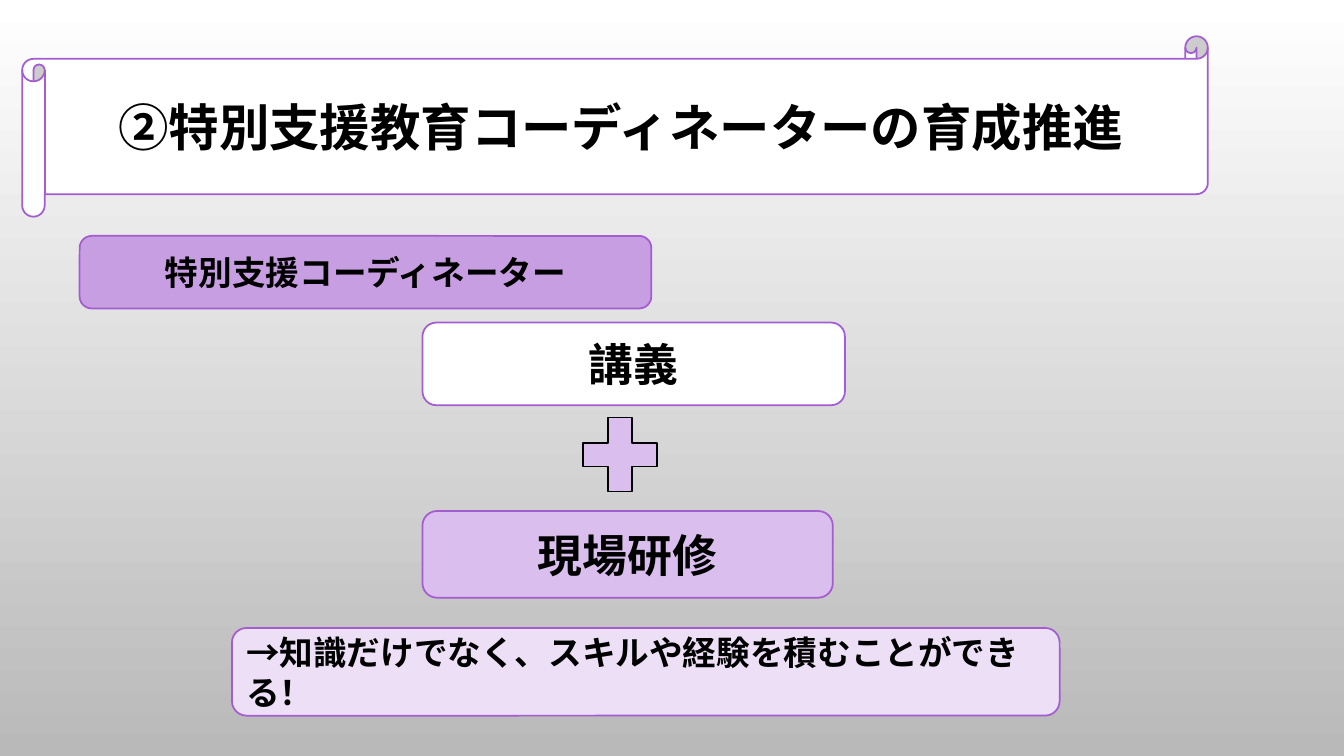
from dataclasses import dataclass

import lxml.etree
import pptx
import pptx.dml.color
import pptx.enum.shapes
import pptx.enum.text
import pptx.oxml.ns
import pptx.slide
import pptx.text.text
import pptx.util

Inches = pptx.util.Inches
Color = pptx.dml.color.RGBColor
Preset = pptx.enum.shapes.MSO_SHAPE
Align = pptx.enum.text.PP_ALIGN


@dataclass(frozen=True)
class Theme:
    white: str = "FFFFFF"
    gray: str = "B9B9B9"
    black: str = "000000"
    outline: str = "A35DD1"
    strong: str = "C89EE3"
    medium: str = "DABEED"
    pale: str = "EDDFF6"
    title_size: int = 36
    step_size: int = 32
    body_size: int = 24
    line_width: float = 1.25
    japanese_font: str = "Noto Sans CJK JP"
    latin_font: str = "Cabin"


THEME = Theme()


@dataclass(frozen=True)
class Panel:
    left: float
    top: float
    width: float
    height: float
    fill: str
    text: str = ""
    size: int = THEME.body_size
    font: str = THEME.japanese_font
    preset: Preset = Preset.ROUNDED_RECTANGLE
    line: str = THEME.outline
    align: Align = Align.CENTER


PANELS = [
    # Title scroll
    Panel(0.22, 0.36, 11.76, 1.79, THEME.white, "②特別支援教育コーディネーターの育成推進",
          THEME.title_size, preset=Preset.HORIZONTAL_SCROLL),
    # Role and first step
    Panel(0.79, 2.34, 5.67, 0.72, THEME.strong, "特別支援コーディネーター",
          font=THEME.latin_font),
    Panel(4.19, 3.2, 4.19, 0.82, THEME.white, "講義", THEME.step_size),
    # Outcome
    Panel(2.3, 6.23, 8.21, 0.87, THEME.pale,
          "→知識だけでなく、スキルや経験を積むことができる！", align=Align.LEFT),
    # Plus sign and second step
    Panel(5.65, 4.01, 1, 1, THEME.medium, preset=Preset.MATH_PLUS, line=THEME.black),
    Panel(4.19, 5.07, 4.07, 0.86, THEME.medium, "現場研修", THEME.step_size,
          font=THEME.latin_font),
]


def paint_background(page: pptx.slide.Slide) -> None:
    fill = page.background.fill
    fill.gradient()
    fill.gradient_angle = 270
    for stop, color, position in zip(fill.gradient_stops, (THEME.white, THEME.gray), (0, 1)):
        stop.color.rgb = Color.from_string(color)
        stop.position = position


def write_text(frame: pptx.text.text.TextFrame, panel: Panel) -> None:
    frame.word_wrap = True
    frame.vertical_anchor = pptx.enum.text.MSO_ANCHOR.MIDDLE
    paragraph = frame.paragraphs[0]
    paragraph.text = panel.text
    paragraph.alignment = panel.align
    font = paragraph.font
    font.size = pptx.util.Pt(panel.size)
    font.bold = True
    font.color.rgb = Color.from_string(THEME.black)
    font.name = panel.font
    # East Asian typeface follows the Latin one
    latin = paragraph._p.pPr.find(".//" + pptx.oxml.ns.qn("a:latin"))
    east_asian = lxml.etree.Element(pptx.oxml.ns.qn("a:ea"), typeface=THEME.japanese_font)
    latin.addnext(east_asian)


def draw_panel(page: pptx.slide.Slide, panel: Panel) -> None:
    box = page.shapes.add_shape(panel.preset, Inches(panel.left), Inches(panel.top),
                                Inches(panel.width), Inches(panel.height))
    box.shadow.inherit = False
    box.fill.solid()
    box.fill.fore_color.rgb = Color.from_string(panel.fill)
    box.line.color.rgb = Color.from_string(panel.line)
    box.line.width = pptx.util.Pt(THEME.line_width)
    if panel.text:
        write_text(box.text_frame, panel)


def main() -> None:
    deck = pptx.Presentation()
    deck.slide_width, deck.slide_height = Inches(13.33), Inches(7.5)
    page = deck.slides.add_slide(deck.slide_layouts[6])
    paint_background(page)
    for panel in PANELS:
        draw_panel(page, panel)
    deck.save("out.pptx")


if __name__ == "__main__":
    main()
